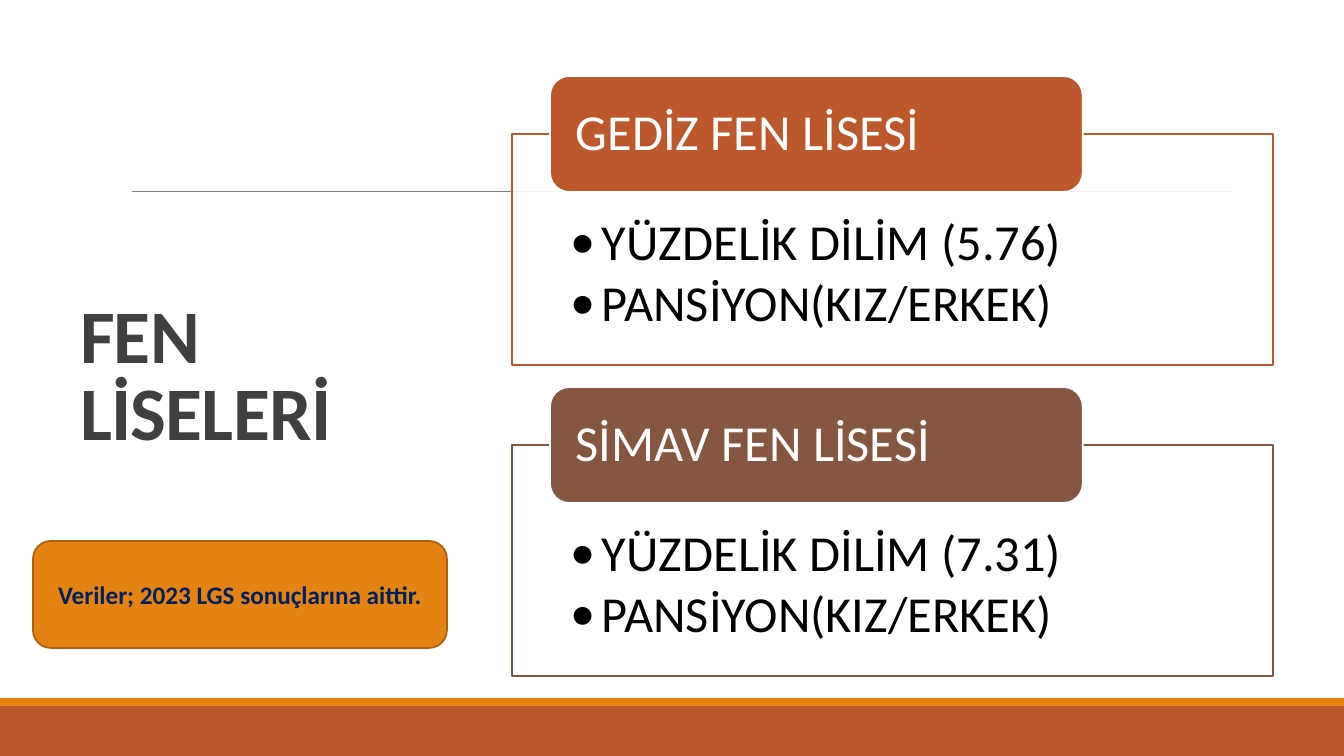
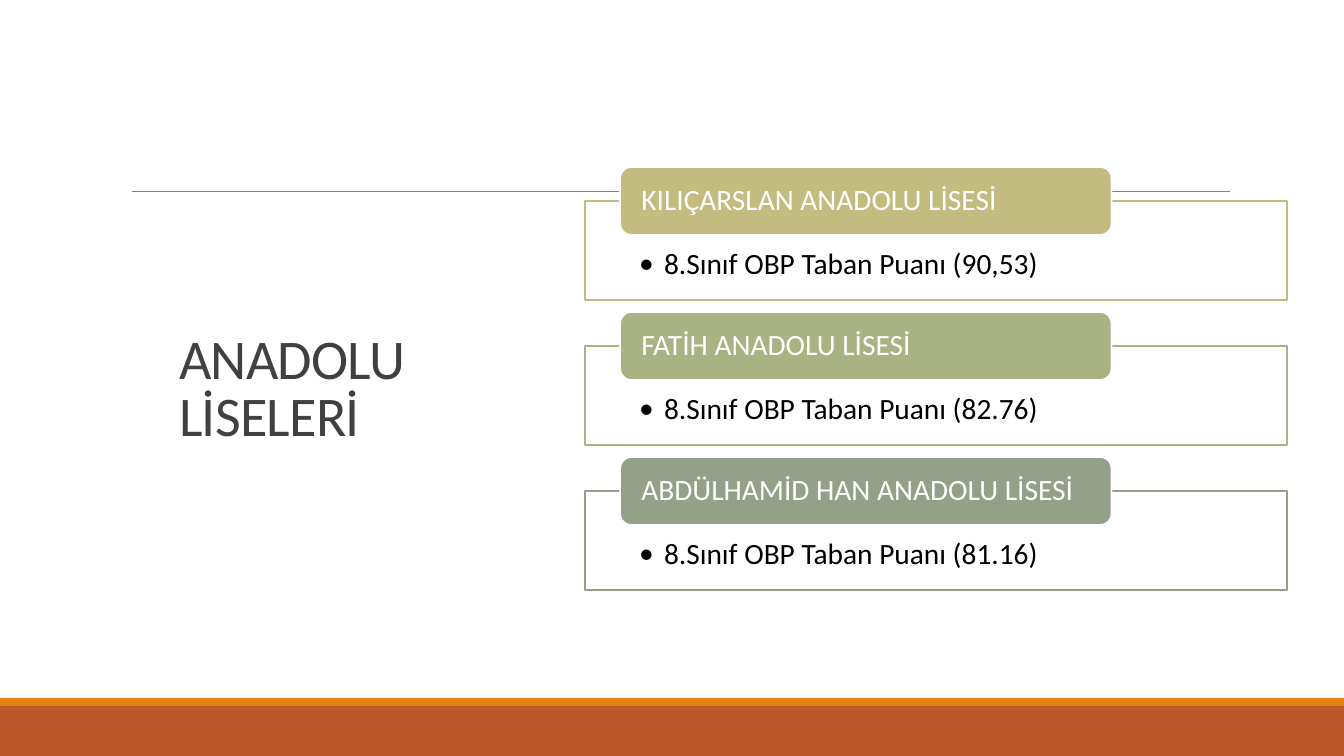
"""Build two slides that list high schools in tabbed panels."""
from lxml import etree
from pptx import Presentation
from pptx import util as u
from pptx.dml import color
from pptx.enum import shapes, text
from pptx.oxml import ns

WIDTH, HEIGHT = 1344, 756
FONT = "Calibri"
WHITE, BLACK, GREY, NAVY = "FFFFFF", "000000", "404040", "002060"
RUST, ORANGE, DARK_ORANGE, RULE_GREY = "BD582C", "E48312", "A9610D", "808080"

BANDS = [((0, 706, WIDTH, 50), RUST), ((0, 698, WIDTH, 8), ORANGE)]
RULE = (132, 191, 1230, 191)

SLIDES = [
    {
        "title": "FEN LİSELERİ",
        "title_box": (70, 71, 377, 616),
        "title_size": 54,
        "title_bold": True,
        "title_anchor": text.MSO_ANCHOR.MIDDLE,
        "panel": (512, 134, 761, 231),
        "pitch": 311,
        "panel_insets": (59, 83, 59, 28),
        "tab_height": 116,
        "tab_inset": 20,
        "indent": 31,
        "size": 36,
        "schools": [
            ("GEDİZ FEN LİSESİ", RUST, ["YÜZDELİK DİLİM (5.76)", "PANSİYON(KIZ/ERKEK)"]),
            ("SİMAV FEN LİSESİ", "865640", ["YÜZDELİK DİLİM (7.31)", "PANSİYON(KIZ/ERKEK)"]),
        ],
        "note": ("Veriler; 2023 LGS sonuçlarına aittir.", (33, 541, 414, 107)),
    },
    {
        "title": "ANADOLU LİSELERİ",
        "title_box": (169, 304, 397, 149),
        "title_size": 40,
        "title_bold": False,
        "title_anchor": text.MSO_ANCHOR.BOTTOM,
        "panel": (585, 201, 702, 99),
        "pitch": 145,
        "panel_insets": (54, 48, 54, 16),
        "tab_height": 68,
        "tab_inset": 18,
        "indent": 25,
        "size": 21,
        "schools": [
            ("KILIÇARSLAN ANADOLU LİSESİ", "C2BC80", ["8.Sınıf OBP Taban Puanı (90,53)"]),
            ("FATİH ANADOLU LİSESİ", "A8B283", ["8.Sınıf OBP Taban Puanı (82.76)"]),
            ("ABDÜLHAMİD HAN ANADOLU LİSESİ", "94A088", ["8.Sınıf OBP Taban Puanı (81.16)"]),
        ],
    },
]


def px(length):
    return u.Emu(round(length * 914400 / 100.8))


def rgb(hex_color):
    return color.RGBColor.from_string(hex_color)


def add_box(slide, preset, box, fill, line=None):
    shape = slide.shapes.add_shape(preset, *map(px, box))
    shape.shadow.inherit = False
    shape.fill.solid()
    shape.fill.fore_color.rgb = rgb(fill)
    if line:
        shape.line.color.rgb = rgb(line)
        shape.line.width = u.Pt(1.25)
    else:
        shape.line.fill.background()
    return shape


def set_frame(shape, anchor, insets):
    frame = shape.text_frame
    frame.word_wrap = True
    frame.auto_size = text.MSO_AUTO_SIZE.NONE
    frame.vertical_anchor = anchor
    (frame.margin_left, frame.margin_top,
     frame.margin_right, frame.margin_bottom) = map(px, insets)
    return frame


def write(paragraph, words, size, ink, bold=False, align=text.PP_ALIGN.LEFT, spacing=0.9):
    paragraph.alignment = align
    paragraph.line_spacing = spacing
    run = paragraph.add_run()
    run.text = words
    run.font.name, run.font.size, run.font.bold = FONT, u.Pt(size), bold
    run.font.color.rgb = rgb(ink)
    return run


def add_bullet(paragraph, indent):
    properties = paragraph._p.get_or_add_pPr()
    properties.set("marL", str(px(indent)))
    properties.set("indent", str(-px(indent)))
    etree.SubElement(properties, ns.qn("a:buFont")).set("typeface", FONT)
    etree.SubElement(properties, ns.qn("a:buChar")).set("char", "•")


def furnish_layout(layout, slide):
    """Move the bands and the rule, drawn on a slide, to its layout."""
    parts = [add_box(slide, shapes.MSO_SHAPE.RECTANGLE, box, fill) for box, fill in BANDS]
    rule = slide.shapes.add_connector(shapes.MSO_CONNECTOR.STRAIGHT, *map(px, RULE))
    rule.line.color.rgb = rgb(RULE_GREY)
    rule.line.width = u.Pt(0.5)
    etree.SubElement(rule._element.spPr, ns.qn("a:effectLst"))
    for index, part in enumerate(parts + [rule]):
        part._element.xpath(".//p:cNvPr")[0].set("id", str(100 + index))
        layout.shapes.element.insert(2 + index, part._element)


def add_title(slide, content):
    title = slide.shapes.title
    title.left, title.top, title.width, title.height = map(px, content["title_box"])
    frame = set_frame(title, content["title_anchor"], (10, 5, 10, 5))
    run = write(frame.paragraphs[0], content["title"], content["title_size"], GREY,
                content["title_bold"], spacing=0.85)
    run.font._element.set("spc", "-50")


def add_school(slide, content, index):
    name, accent, facts = content["schools"][index]
    left, top, width, height = content["panel"]
    top += index * content["pitch"]
    size, tab_height, inset = content["size"], content["tab_height"], content["tab_inset"]

    panel = add_box(slide, shapes.MSO_SHAPE.RECTANGLE, (left, top, width, height), WHITE, accent)
    fill_color = panel._element.spPr.find(ns.qn("a:solidFill"))[0]
    etree.SubElement(fill_color, ns.qn("a:alpha")).set("val", "90000")
    frame = set_frame(panel, text.MSO_ANCHOR.TOP, content["panel_insets"])
    for number, fact in enumerate(facts):
        paragraph = frame.add_paragraph() if number else frame.paragraphs[0]
        write(paragraph, fact, size, BLACK)
        paragraph.space_after = u.Pt(round(size * 0.15))
        add_bullet(paragraph, content["indent"])

    tab_box = (left + width * 0.05, top - tab_height / 2, width * 0.7, tab_height)
    tab = add_box(slide, shapes.MSO_SHAPE.ROUNDED_RECTANGLE, tab_box, accent, WHITE)
    frame = set_frame(tab, text.MSO_ANCHOR.MIDDLE, (inset, 0, inset, 0))
    write(frame.paragraphs[0], name, size, WHITE)


def add_note(slide, words, box):
    note = add_box(slide, shapes.MSO_SHAPE.ROUNDED_RECTANGLE, box, ORANGE, DARK_ORANGE)
    frame = set_frame(note, text.MSO_ANCHOR.MIDDLE, (10, 5, 10, 5))
    write(frame.paragraphs[0], words, 18, NAVY, True, text.PP_ALIGN.CENTER, 1.0)


def main():
    deck = Presentation()
    deck.slide_width, deck.slide_height = px(WIDTH), px(HEIGHT)
    layout = deck.slide_layouts.get_by_name("Title Only")
    for number, content in enumerate(SLIDES):
        slide = deck.slides.add_slide(layout)
        if number == 0:
            furnish_layout(layout, slide)
        add_title(slide, content)
        for index in range(len(content["schools"])):
            add_school(slide, content, index)
        if "note" in content:
            add_note(slide, *content["note"])
    deck.save("out.pptx")


if __name__ == "__main__":
    main()
